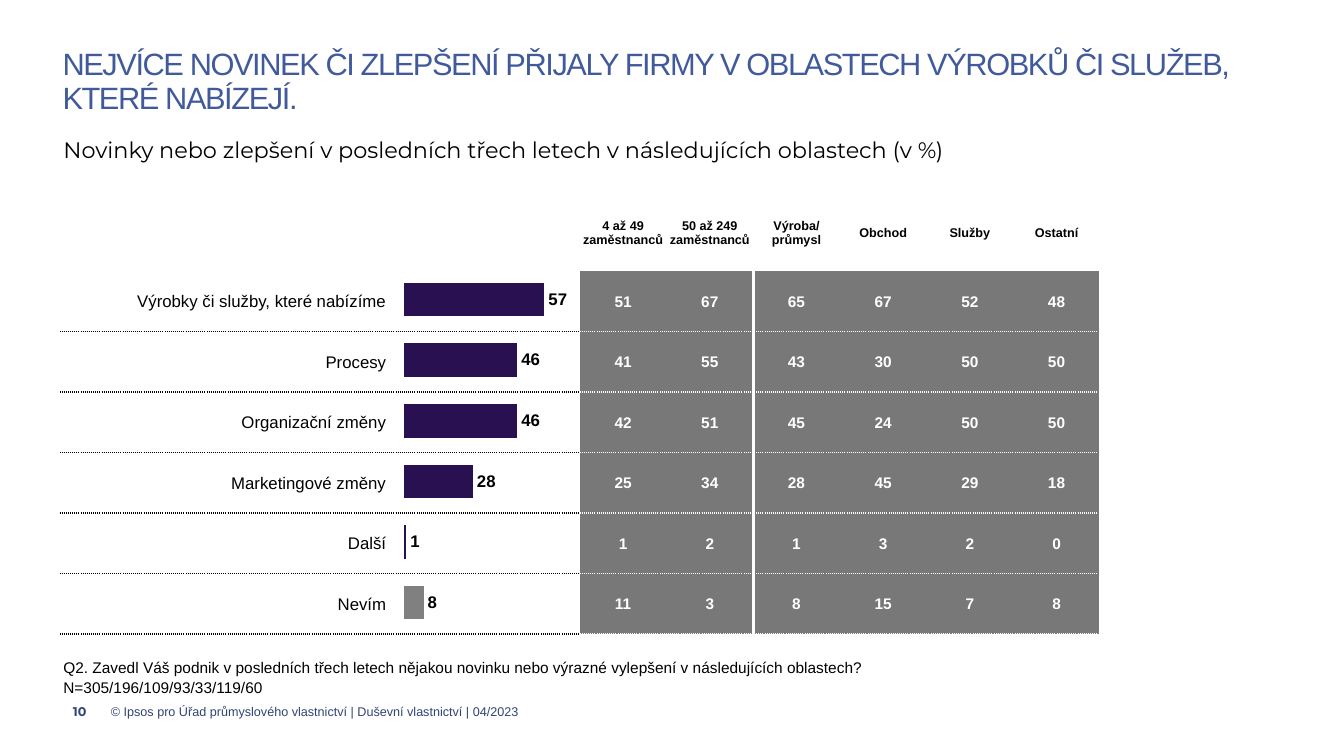
from lxml.etree import SubElement
from pptx import Presentation
from pptx.chart.data import CategoryChartData
from pptx.dml.color import RGBColor
from pptx.enum.chart import XL_CHART_TYPE as ChartType, XL_LABEL_POSITION as LabelPosition
from pptx.enum.text import MSO_ANCHOR as Anchor, MSO_AUTO_SIZE as AutoSize, PP_ALIGN as Align
from pptx.oxml import parse_xml
from pptx.oxml.ns import nsdecls, qn
from pptx.util import Inches, Pt

BLACK = RGBColor(0x00, 0x00, 0x00)
WHITE = RGBColor(0xFF, 0xFF, 0xFF)
GREY = RGBColor(0x78, 0x78, 0x78)
BAR_GREY = RGBColor(0x80, 0x80, 0x80)
VIOLET = RGBColor(0x28, 0x10, 0x51)
TITLE_BLUE = RGBColor(0x40, 0x5A, 0x9C)
FOOTER_BLUE = RGBColor(0x30, 0x44, 0x75)

TITLE = ("NEJVÍCE NOVINEK ČI ZLEPŠENÍ PŘIJALY FIRMY V OBLASTECH "
         "VÝROBKŮ ČI SLUŽEB, KTERÉ NABÍZEJÍ.")
SUBTITLE = "Novinky nebo zlepšení v posledních třech letech v následujících oblastech (v %)"
QUESTION = ("Q2. Zavedl Váš podnik v posledních třech letech nějakou novinku nebo výrazné "
            "vylepšení v následujících oblastech?\nN=305/196/109/93/33/119/60")
FOOTER = "© Ipsos pro Úřad průmyslového vlastnictví | Duševní vlastnictví | 04/2023"

GROUPS = ["4 až 49 zaměstnanců", "50 až 249 zaměstnanců", "Výroba/\nprůmysl",
          "Obchod", "Služby", "Ostatní"]
# Area, share of all firms, shares by group
AREAS = [
    ("Výrobky či služby, které nabízíme", 57, [51, 67, 65, 67, 52, 48]),
    ("Procesy", 46, [41, 55, 43, 30, 50, 50]),
    ("Organizační změny", 46, [42, 51, 45, 24, 50, 50]),
    ("Marketingové změny", 28, [25, 34, 28, 45, 29, 18]),
    ("Další", 1, [1, 2, 1, 3, 2, 0]),
    ("Nevím", 8, [11, 3, 8, 15, 7, 8]),
]


class SlideBuilder:
    font_name = "Arial"

    def __init__(self, deck):
        self.page = deck.slides.add_slide(deck.slide_layouts[5])

    def style(self, font, size, color=BLACK, **formats):
        values = {"name": self.font_name, "size": Pt(size), "bold": False, **formats}
        for name, value in values.items():
            setattr(font, name, value)
        font.color.rgb = color

    def put_text(self, frame, text, size, color=BLACK, align=Align.LEFT, spacing=None,
                 tracking=None, **formats):
        para = frame.paragraphs[0]
        para.alignment = align
        para.line_spacing = spacing
        for index, line in enumerate(text.split("\n")):
            if index:
                para.add_line_break()
            span = para.add_run()
            span.text = line
            self.style(span.font, size, color, **formats)
            if tracking:
                span.font._element.set("spc", str(tracking))

    def set_frame(self, frame, insets, anchor=Anchor.TOP, grow=False):
        left, top, right, bottom = (Inches(inset) for inset in insets)
        values = {"margin_left": left, "margin_top": top, "margin_right": right,
                  "margin_bottom": bottom, "vertical_anchor": anchor, "word_wrap": True,
                  "auto_size": AutoSize.SHAPE_TO_FIT_TEXT if grow else AutoSize.NONE}
        for name, value in values.items():
            setattr(frame, name, value)

    def title(self, place, text, **formats):
        box = self.page.shapes.title
        box.left, box.top, box.width, box.height = map(Inches, place)
        self.set_frame(box.text_frame, (0.18, 0.05, 0.18, 0.05), grow=True)
        self.put_text(box.text_frame, text, **formats)

    def text(self, place, text, insets=(0, 0.05, 0, 0.05), anchor=Anchor.TOP, grow=False,
             **formats):
        box = self.page.shapes.add_textbox(*map(Inches, place))
        self.set_frame(box.text_frame, insets, anchor, grow)
        self.put_text(box.text_frame, text, **formats)

    def borders(self, cell, **sides):
        """Each side is (colour, width, dash); the sides left out get no line."""
        properties = cell._tc.get_or_add_tcPr()
        for side in "LRTB":
            line = SubElement(properties, qn(f"a:ln{side}"))
            if side not in sides:
                SubElement(line, qn("a:noFill"))
                continue
            color, width, dash = sides[side]
            line.set("w", str(Pt(width)))
            fill = SubElement(line, qn("a:solidFill"))
            SubElement(fill, qn("a:srgbClr")).set("val", str(color))
            SubElement(line, qn("a:prstDash")).set("val", dash)

    def cell(self, cell, text, fill=None, **formats):
        if fill is None:
            cell.fill.background()
        else:
            cell.fill.solid()
            cell.fill.fore_color.rgb = fill
        cell.vertical_anchor = Anchor.MIDDLE
        cell.margin_left = cell.margin_top = cell.margin_right = Inches(0.01)
        cell.margin_bottom = 0
        if text:
            self.put_text(cell.text_frame, text, **formats)

    def table(self, place, widths, heights):
        frame = self.page.shapes.add_table(len(heights), len(widths), *map(Inches, place))
        table = frame.table
        table.first_row = table.horz_banding = False
        for column, width in zip(table.columns, widths):
            column.width = Inches(width)
        for row, height in zip(table.rows, heights):
            row.height = Inches(height)
        return table

    def bar_chart(self, place, values, plot_area):
        data = CategoryChartData(number_format="#,##0")
        data.categories = [str(number + 1) for number in range(len(values))]
        data.add_series("Series 1", values)
        chart = self.page.shapes.add_chart(
            ChartType.BAR_CLUSTERED, *map(Inches, place), data).chart
        chart.has_legend = chart.has_title = False
        self.style(chart.font, 11)

        chart.category_axis.reverse_order = True
        chart.category_axis.visible = False
        axis = chart.value_axis
        axis.minimum_scale, axis.maximum_scale, axis.major_unit = 0, 95, 20
        axis.has_major_gridlines = axis.visible = False

        plot = chart.plots[0]
        plot.gap_width = 80
        plot.vary_by_categories = False
        bars = plot.series[0]
        last_bar = bars.points[len(values) - 1]
        for part, color in ((bars, VIOLET), (last_bar, BAR_GREY)):
            part.format.fill.solid()
            part.format.fill.fore_color.rgb = color

        labels = bars.data_labels
        formats = {"show_value": True, "number_format": "#,##0",
                   "number_format_is_linked": False, "position": LabelPosition.OUTSIDE_END}
        for name, value in formats.items():
            setattr(labels, name, value)
        self.style(labels.font, 12, bold=True)

        # Fixed inner plot area
        area = chart._chartSpace.chart.plotArea
        for layout in area.findall(qn("c:layout")):
            area.remove(layout)
        sizes = "".join(f'<c:{name} val="{value}"/>' for name, value in zip("xywh", plot_area))
        area.insert(0, parse_xml(
            f'<c:layout {nsdecls("c")}><c:manualLayout><c:layoutTarget val="inner"/>'
            f'<c:xMode val="edge"/><c:yMode val="edge"/>{sizes}</c:manualLayout></c:layout>'))


def fill_table(builder, table):
    rows = [["", "", *GROUPS]]
    rows += [[name, "", *map(str, shares)] for name, _, shares in AREAS]
    for row, texts in enumerate(rows):
        for column, text in enumerate(texts):
            in_groups = column >= 2
            # Dotted row lines and solid white dividers between column blocks
            dotted = (WHITE if in_groups else BLACK, 1, "sysDot")
            sides = {}
            if row >= 1:
                sides["B"] = dotted
            if row >= 2:
                sides["T"] = dotted
            if column == 3:
                sides["R"] = (WHITE, 2.25, "solid")
            elif column == 4:
                sides["L"] = (WHITE, 2.25, "solid")
            elif column == 7:
                sides["R"] = (WHITE, 1.5, "solid")
            cell = table.cell(row, column)
            builder.borders(cell, **sides)
            if not in_groups:
                builder.cell(cell, text, size=12, align=Align.RIGHT)
            elif row == 0:
                builder.cell(cell, text, WHITE, size=9, align=Align.CENTER, bold=True)
            else:
                builder.cell(cell, text, GREY, size=11, color=WHITE, align=Align.CENTER,
                             bold=True)


def main():
    deck = Presentation()
    deck.slide_width, deck.slide_height = Inches(13.33), Inches(7.5)
    builder = SlideBuilder(deck)

    # Heading
    builder.title((0.44, 0.44, 12.09, 0.77), TITLE, size=22, color=TITLE_BLUE, spacing=0.9,
                  tracking=-100)
    builder.text((0.63, 1.42, 9.86, 0.21), SUBTITLE, insets=(0, 0, 0, 0), grow=True,
                 size=16, name="Montserrat", spacing=Pt(14))

    # Shares by group, with the bars for all firms over the second column
    table = builder.table((0.59, 1.92, 10.35, 4.34), [3.25, 1.91] + [0.86] * 6,
                          [0.77] + [0.6] * 6)
    fill_table(builder, table)
    builder.bar_chart((3.69, 2.18, 2.64, 4.1), [total for _, total, _ in AREAS],
                      (0.12, 0.12, 0.88, 0.88))

    # Question and footer
    builder.text((0.53, 6.47, 11.36, 0.48), QUESTION, insets=(0.1, 0.05, 0.1, 0.05),
                 grow=True, size=11, spacing=Pt(14))
    builder.text((0.63, 6.86, 0.32, 0.4), "10", anchor=Anchor.MIDDLE, size=9,
                 color=FOOTER_BLUE, align=Align.CENTER, name="Montserrat", bold=True)
    builder.text((1.1, 6.86, 10.07, 0.4), FOOTER, anchor=Anchor.MIDDLE, size=9,
                 color=FOOTER_BLUE)

    deck.save("out.pptx")


if __name__ == "__main__":
    main()
